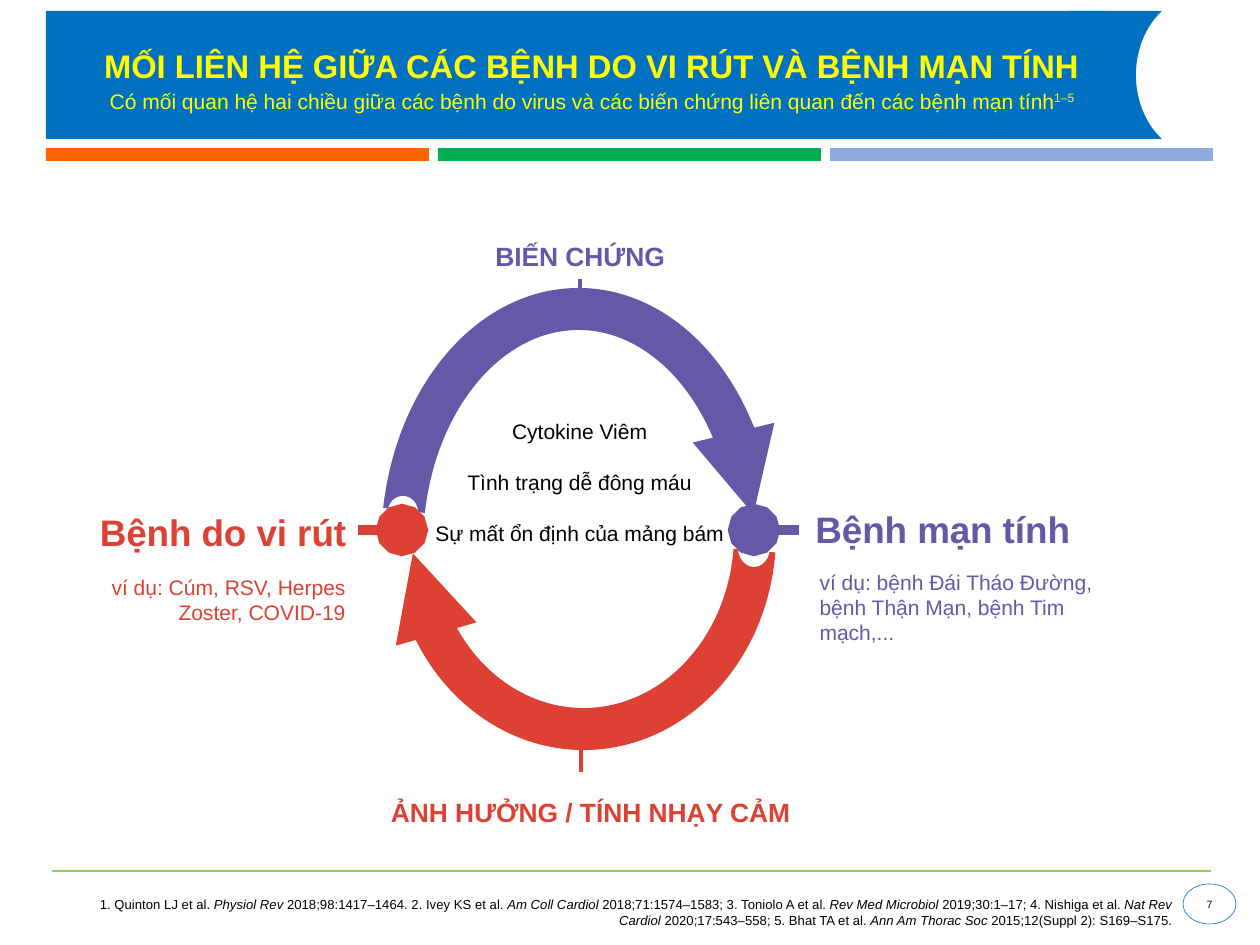
import pptx
import pptx.util
import pptx.dml.color
import pptx.enum.shapes
import pptx.enum.text
import pptx.oxml.ns
import lxml.etree

SCALE = 914400 / 168
HUES = {"blue": "0070C0", "orange": "FF6600", "green": "00B050", "sky": "8FAADC",
        "lime": "92D050", "yellow": "FFFF00", "red": "DC4133", "violet": "6658A6",
        "white": "FFFFFF", "black": "000000"}
KINDS = pptx.enum.shapes.MSO_SHAPE
ALIGN = pptx.enum.text.PP_ALIGN
ANCHOR = pptx.enum.text.MSO_ANCHOR
qn = pptx.oxml.ns.qn


def px(num):
    """Turn whole pixels into EMU."""
    return round(num * SCALE)


def rgb(hue):
    """Look up a named colour."""
    return pptx.dml.color.RGBColor.from_string(HUES[hue])


class Board:
    """Holds the style and the current slide."""

    def __init__(self, slide):
        """Keep the slide and its font."""
        self.slide = slide
        self.font = "Arial"

    def place(self, shape, box):
        """Move a placeholder to a pixel box, in front of all else."""
        for key, num in zip(("left", "top", "width", "height"), box):
            setattr(shape, key, px(num))
        self.slide.shapes.element.append(shape.element)

    def stroke(self, shape, hue, width, tip=None, size="med"):
        """Set a line and its end mark."""
        shape.line.color.rgb = rgb(hue)
        shape.line.width = pptx.util.Pt(width)
        if tip:
            line = shape.element.spPr.find(qn("a:ln"))
            lxml.etree.SubElement(line, qn("a:tailEnd"), type=tip, w=size, len=size)

    def shape(self, kind, box, fill=None):
        """Add a preset shape without line."""
        shape = self.slide.shapes.add_shape(kind, *map(px, box))
        shape.shadow.inherit = False
        shape.line.fill.background()
        if fill:
            shape.fill.solid()
            shape.fill.fore_color.rgb = rgb(fill)
        else:
            shape.fill.background()
        return shape

    def arc(self, box, hue, start, end, turn=0):
        """Add a thick curved arrow."""
        arc = self.shape(KINDS.ARC, box)
        arc.adjustments[0], arc.adjustments[1] = start, end
        arc.rotation = turn
        self.stroke(arc, hue, 18, "triangle", "sm")

    def line(self, ends, hue, width, tip=None):
        """Add a straight line."""
        line = self.slide.shapes.add_connector(
            pptx.enum.shapes.MSO_CONNECTOR.STRAIGHT, *map(px, ends))
        self.stroke(line, hue, width, tip, "lg")
        lxml.etree.SubElement(line.element.spPr, qn("a:effectLst"))

    def frame(self, shape, anchor=ANCHOR.TOP, inset=True):
        """Prepare the text frame of a shape."""
        frame = shape.text_frame
        form = {"word_wrap": True, "vertical_anchor": anchor,
                "auto_size": pptx.enum.text.MSO_AUTO_SIZE.NONE}
        if not inset:
            form.update(dict.fromkeys(
                ("margin_left", "margin_right", "margin_top", "margin_bottom"), 0))
        for key, value in form.items():
            setattr(frame, key, value)
        return frame

    def run(self, para, text, hue, size, bold=False, italic=False):
        """Add a formatted run."""
        run = para.add_run()
        run.text = text
        form = {"name": self.font, "size": pptx.util.Pt(size),
                "bold": bold, "italic": italic}
        for key, value in form.items():
            setattr(run.font, key, value)
        run.font.color.rgb = rgb(hue)
        return run

    def text(self, box, lines, hue, size, bold=False, align=ALIGN.CENTER, gap=0):
        """Add a text box, one paragraph for each line."""
        frame = self.frame(self.slide.shapes.add_textbox(*map(px, box)))
        for num, words in enumerate(lines):
            para = frame.add_paragraph() if num else frame.paragraphs[0]
            para.alignment = align
            if num:
                para.space_before = pptx.util.Pt(gap)
            self.run(para, words, hue, size, bold)

    def title(self, box, head, sub, note):
        """Fill the title with a heading, a subline and a raised note."""
        shape = self.slide.shapes.title
        self.place(shape, box)
        para = self.frame(shape, inset=False).paragraphs[0]
        para.alignment = ALIGN.CENTER
        para.line_spacing = 1.14
        self.run(para, head, "yellow", 14, True)
        para.add_line_break()
        self.run(para, sub, "yellow", 9)
        run = self.run(para, note, "yellow", 9)
        run._r.get_or_add_rPr().set("baseline", "30000")

    def source(self, box, parts):
        """Fill the body with sources, every second part in italics."""
        shape = self.slide.placeholders[1]
        self.place(shape, box)
        para = self.frame(shape, ANCHOR.BOTTOM, False).paragraphs[0]
        props = para._p.get_or_add_pPr()
        props.set("marL", "0")
        props.set("indent", "0")
        lxml.etree.SubElement(props, qn("a:buNone"))
        para.alignment = ALIGN.RIGHT
        para.line_spacing = 1.0
        para.space_before = pptx.util.Pt(0)
        para.space_after = pptx.util.Pt(3.4)
        for num, words in enumerate(parts):
            self.run(para, words, "black", 5.6, italic=num % 2 == 1)

    def badge(self, box, words):
        """Add the round page number."""
        shape = self.shape(KINDS.OVAL, box)
        self.stroke(shape, "blue", 0.25)
        para = self.frame(shape, ANCHOR.MIDDLE, False).paragraphs[0]
        para.alignment = ALIGN.CENTER
        self.run(para, words, "black", 4.5)


def main():
    """Build and save the slide."""
    deck = pptx.Presentation()
    deck.slide_width, deck.slide_height = px(1260), px(945)
    board = Board(deck.slides.add_slide(deck.slide_layouts[1]))

    board.shape(KINDS.FLOWCHART_COLLATE, (1067, 11, 91, 128), "blue")
    board.shape(KINDS.RECTANGLE, (46, 11, 1064, 128), "blue")
    board.shape(KINDS.MOON, (1110, 11, 52, 128), "blue")
    for num, hue in enumerate(("orange", "green", "sky")):
        board.shape(KINDS.RECTANGLE, (46 + 392 * num, 148, 383, 13), hue)
    board.line((52, 871, 1211, 871), "lime", 1)
    board.badge((1183, 884, 53, 40), "7")

    board.title((47, 40, 1090, 148),
                "MỐI LIÊN HỆ GIỮA CÁC BỆNH DO VI RÚT VÀ BỆNH MẠN TÍNH",
                "Có mối quan hệ hai chiều giữa các bệnh do virus và các biến chứng "
                "liên quan đến các bệnh mạn tính", "1–5")
    board.source((85, 862, 1087, 66), (
        "1. Quinton LJ et al. ", "Physiol Rev ",
        "2018;98:1417–1464. 2. Ivey KS et al. ", "Am Coll Cardiol ",
        "2018;71:1574–1583; 3. Toniolo A et al. ", "Rev Med Microbiol ",
        "2019;30:1–17; 4. Nishiga et al. ", "Nat Rev Cardiol ",
        "2020;17:543–558; 5. Bhat TA et al. ", "Ann Am Thorac Soc ",
        "2015;12(Suppl 2): S169–S175."))

    board.text((29, 502, 334, 79), ["Bệnh do vi rút"], "red", 15.75, True, ALIGN.RIGHT)
    board.text((49, 566, 313, 87), ["ví dụ: Cúm, RSV, Herpes Zoster, COVID-19"],
               "red", 9, align=ALIGN.RIGHT)
    board.text((799, 499, 375, 79), ["Bệnh mạn tính"], "violet", 15.75, True, ALIGN.LEFT)
    board.text((803, 561, 353, 121),
               ["ví dụ: bệnh Đái Tháo Đường, bệnh Thận Mạn, bệnh Tim mạch,..."],
               "violet", 9, align=ALIGN.LEFT)
    board.text((435, 232, 290, 64), ["BIẾN CHỨNG"], "violet", 11.25, True)
    board.text((358, 788, 465, 64), ["ẢNH HƯỞNG / TÍNH NHẠY CẢM"], "red", 11.25, True)

    board.arc((402, 309, 353, 474), "violet", 114.9, 209.85)
    board.line((580, 279, 580, 316), "violet", 2)
    board.line((581, 736, 581, 772), "red", 2)
    board.arc((412, 339, 343, 390), "red", 111.32, 212.14, 180)
    board.shape(KINDS.OVAL, (738, 528, 32, 39), "white")
    board.shape(KINDS.OVAL, (388, 496, 30, 32), "white")
    board.line((358, 530, 402, 530), "red", 4.5, "oval")
    board.line((799, 530, 754, 530), "violet", 4.5, "oval")
    board.text((408, 410, 343, 186),
               ["Cytokine Viêm", "Tình trạng dễ đông máu", "Sự mất ổn định của mảng bám"],
               "black", 9, gap=11)
    deck.save("out.pptx")


if __name__ == "__main__":
    main()
